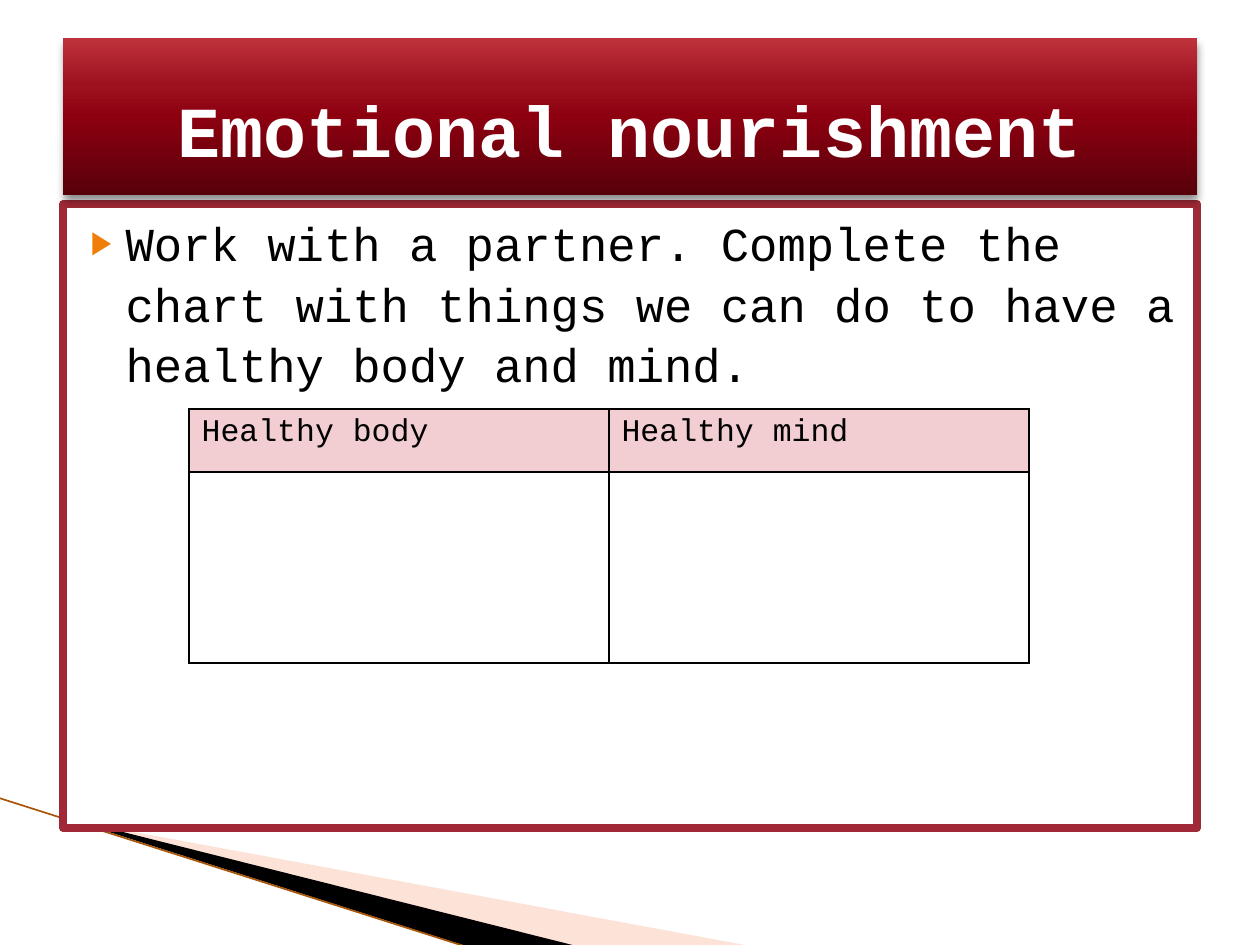
from lxml import etree
from pptx import Presentation
from pptx.dml.color import RGBColor
from pptx.enum.shapes import MSO_CONNECTOR
from pptx.enum.text import MSO_ANCHOR, MSO_AUTO_SIZE, PP_ALIGN
from pptx.oxml import parse_xml
from pptx.oxml.ns import nsdecls, qn
from pptx.util import Pt

STRAIGHT = MSO_CONNECTOR.STRAIGHT
MIDDLE, TOP = MSO_ANCHOR.MIDDLE, MSO_ANCHOR.TOP
CENTER, LEFT = PP_ALIGN.CENTER, PP_ALIGN.LEFT
NO_FIT = MSO_AUTO_SIZE.NONE
THEME = {
    "font": "Courier New", "title": 41, "body": 27, "cell": 18,
    "white": "FFFFFF", "black": "000000", "frame": "9F2936", "header": "F2CED2",
    "bullet": "F07F09", "peach": "FCB79B", "edge": "A85508",
    "gradient": [(0, "58000A"), (50, "8D0010"), (70, "9E111F"), (100, "BE323C")],
}
SCALE = 914400 / 126


def px(*values):
    return [round(v * SCALE) for v in values]


def write(tf, text, size, color="black", bold=False, align=LEFT, anchor=TOP, spacing=1.0):
    tf.word_wrap = True
    tf.auto_size = NO_FIT
    tf.vertical_anchor = anchor
    p = tf.paragraphs[0]
    p.alignment = align
    p.space_before = Pt(0)
    p.line_spacing = spacing
    r = p.add_run()
    r.text = text
    r.font.name = THEME["font"]
    r.font.size = Pt(THEME[size])
    r.font.bold = bold
    r.font.color.rgb = RGBColor.from_string(THEME[color])
    return p


prs = Presentation()
prs.slide_width, prs.slide_height = px(1260, 945)
s = prs.slides.add_slide(prs.slide_layouts[1])
title, body = s.shapes.title, s.placeholders[1]

wedges = [
    ("peach", 40, [(69, 820), (750, 946), (575, 946), (69, 819)]),
    ("black", 100, [(67, 818), (576, 946), (469, 947), (68, 819)]),
]
for color, opacity, points in wedges:
    fb = s.shapes.build_freeform(*points[0], scale=SCALE)
    fb.add_line_segments(points[1:], close=True)
    sp = fb.convert_to_shape()
    sp.shadow.inherit = False
    sp.line.fill.background()
    sp.fill.solid()
    sp.fill.fore_color.rgb = RGBColor.from_string(THEME[color])
    clr = sp._element.spPr.find(qn("a:solidFill"))[0]
    etree.SubElement(clr, qn("a:alpha"), val=str(opacity * 1000))

edge = s.shapes.add_connector(STRAIGHT, *px(-1, 798, 467, 947))
edge.line.width = Pt(0.95)
edge.line.color.rgb = RGBColor.from_string(THEME["edge"])
etree.SubElement(edge._element.spPr, qn("a:effectLst"))

for sp, box in ((body, (63, 204, 1134, 624)), (title, (63, 38, 1134, 157))):
    sp.left, sp.top, sp.width, sp.height = px(*box)
    s.shapes._spTree.append(sp._element)

body.fill.solid()
body.fill.fore_color.rgb = RGBColor.from_string(THEME["white"])
body.line.width = Pt(4.33)
body.line.color.rgb = RGBColor.from_string(THEME["frame"])
p = write(body.text_frame, "Work with a partner. Complete the chart with things we can do to have a "
          "healthy body and mind.", "body", spacing=1.07)
pPr = p._p.get_or_add_pPr()
indent, hanging = px(50, -35)
pPr.set("marL", str(indent))
pPr.set("indent", str(hanging))
bullet_color = etree.SubElement(pPr, qn("a:buClr"))
etree.SubElement(bullet_color, qn("a:srgbClr"), val=THEME["bullet"])
etree.SubElement(pPr, qn("a:buSzPct"), val="68000")
etree.SubElement(pPr, qn("a:buChar"), char="▶")

stops = "".join(f'<a:gs pos="{pos * 1000}"><a:srgbClr val="{c}"/></a:gs>' for pos, c in THEME["gradient"])
spPr = title._element.spPr
spPr.append(parse_xml(f'<a:gradFill {nsdecls("a")}><a:gsLst>{stops}</a:gsLst>'
                      '<a:lin ang="16200000" scaled="0"/></a:gradFill>'))
spPr.append(parse_xml(f'<a:effectLst {nsdecls("a")}><a:outerShdw blurRad="{Pt(5)}" dist="{Pt(3)}" '
                      f'dir="5400000" rotWithShape="0"><a:srgbClr val="{THEME["black"]}">'
                      '<a:alpha val="45000"/></a:srgbClr></a:outerShdw></a:effectLst>'))
write(title.text_frame, "Emotional nourishment", "title", "white", True, CENTER, MIDDLE)
title.text_frame.margin_top, title.text_frame.margin_bottom = px(30, 6)

table = s.shapes.add_table(2, 2, *px(189, 409, 840, 254)).table
table.first_row = table.horz_banding = False
for row, height in zip(table.rows, px(63, 191)):
    row.height = height
for cell, text in zip(table.rows[0].cells, ("Healthy body", "Healthy mind")):
    write(cell.text_frame, text, "cell")
for i, color in enumerate(("header", "white")):
    for cell in table.rows[i].cells:
        tcPr = cell._tc.get_or_add_tcPr()
        for side in ("lnL", "lnR", "lnT", "lnB"):
            ln = etree.SubElement(tcPr, qn(f"a:{side}"), w=str(Pt(1)))
            fill = etree.SubElement(ln, qn("a:solidFill"))
            etree.SubElement(fill, qn("a:srgbClr"), val=THEME["black"])
        cell.fill.solid()
        cell.fill.fore_color.rgb = RGBColor.from_string(THEME[color])

prs.save("out.pptx")
